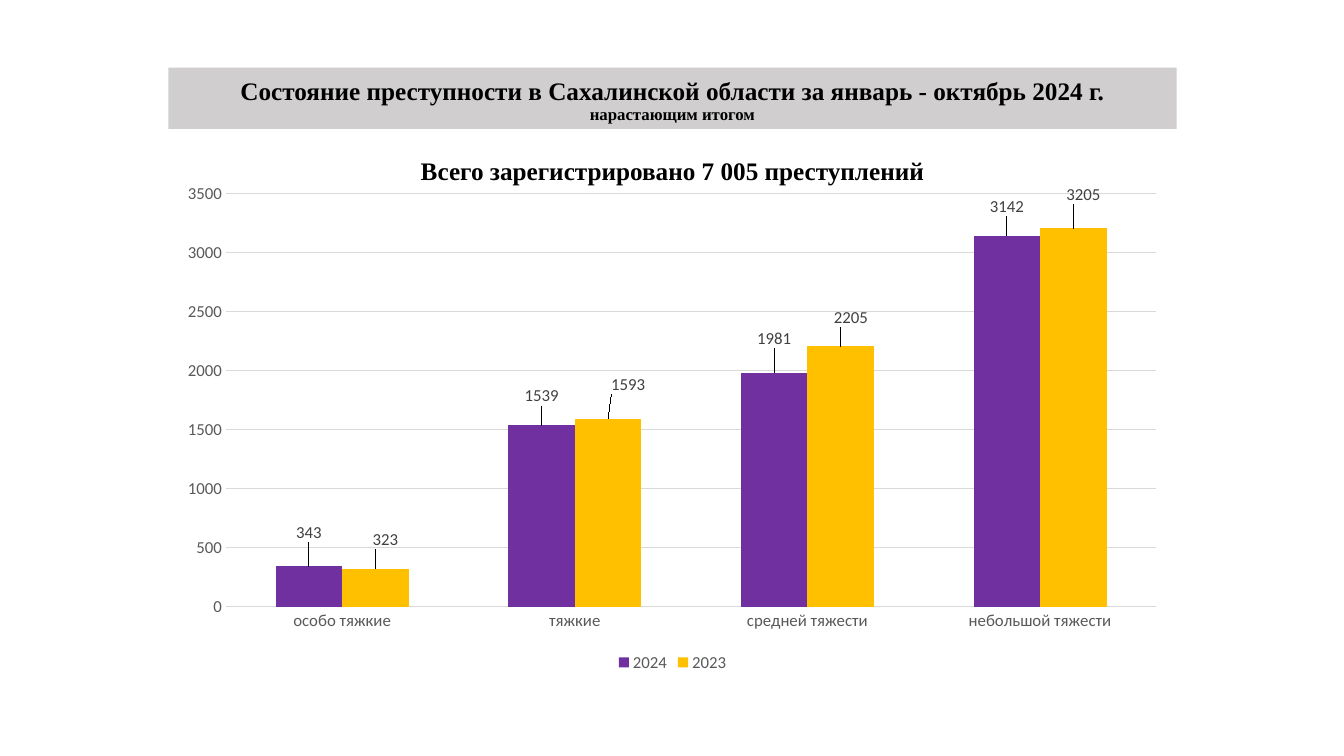
from dataclasses import dataclass

from lxml.etree import _Element as Element
from pptx import Presentation
from pptx.chart.data import CategoryChartData
from pptx.chart.series import BarSeries
from pptx.dml.color import RGBColor
from pptx.enum.chart import XL_CHART_TYPE as ChartType
from pptx.enum.chart import XL_LABEL_POSITION as LabelPosition
from pptx.enum.chart import XL_LEGEND_POSITION as LegendPosition
from pptx.enum.chart import XL_TICK_MARK as TickMark
from pptx.enum.text import MSO_ANCHOR as Anchor
from pptx.enum.text import PP_ALIGN as Align
from pptx.oxml import parse_xml
from pptx.oxml.ns import nsdecls
from pptx.slide import Slide
from pptx.util import Inches, Pt

COLORS = {
    "band": "D0CECE",
    "heading": "000000",
    "axis": "595959",
    "label": "404040",
    "grid": "D9D9D9",
    "2024": "7030A0",
    "2023": "FFC000",
}
LEFT, WIDTH = 1.67, 10
CATEGORIES = ["особо тяжкие", "тяжкие", "средней тяжести", "небольшой тяжести"]


@dataclass
class Heading:
    top: float
    height: float
    lines: list[tuple[str, int]]
    spacing: float
    anchor: Anchor
    fill: str | None = None


@dataclass
class Year:
    name: str
    values: list[int]
    label_shifts: list[tuple[float, float]]  # fractions of the chart size


HEADINGS = [
    Heading(0.67, 0.61,
            [("Состояние преступности в Сахалинской области за январь - октябрь 2024 г.", 18),
             ("нарастающим итогом", 12)], 0.9, Anchor.BOTTOM, "band"),
    Heading(1.55, 0.36, [("Всего зарегистрировано 7 005 преступлений", 18)], 0.8, Anchor.TOP),
]
YEARS = [
    Year("2024", [343, 1539, 1981, 3142],
         [(0, -0.04), (0, -0.03), (0, -0.04), (0, -0.03)]),
    Year("2023", [323, 1593, 2205, 3205],
         [(0.01, -0.03), (0.02, -0.04), (0.01, -0.03), (0.01, -0.04)]),
]


def rgb(key: str) -> RGBColor:
    return RGBColor.from_string(COLORS[key])


def set_font(font, size: int, color: str, name: str = "Calibri", bold: bool = False) -> None:
    for attribute, value in {"size": Pt(size), "name": name, "bold": bold}.items():
        setattr(font, attribute, value)
    font.color.rgb = rgb(color)


def manual_layout(**parts: str | float) -> Element:
    body = "".join(f'<c:{key} val="{value}"/>' for key, value in parts.items())
    return parse_xml(f'<c:layout {nsdecls("c")}><c:manualLayout>{body}</c:manualLayout></c:layout>')


def add_heading(slide: Slide, heading: Heading) -> None:
    box = slide.shapes.add_textbox(
        Inches(LEFT), Inches(heading.top), Inches(WIDTH), Inches(heading.height))
    if heading.fill:
        box.fill.solid()
        box.fill.fore_color.rgb = rgb(heading.fill)
    frame = box.text_frame
    frame.word_wrap = True
    frame.vertical_anchor = heading.anchor
    paragraph = frame.paragraphs[0]
    paragraph.alignment = Align.CENTER
    paragraph.line_spacing = heading.spacing
    for index, (text, size) in enumerate(heading.lines):
        if index:
            paragraph.add_line_break()
        run = paragraph.add_run()
        run.text = text
        set_font(run.font, size, "heading", "Times New Roman", True)


def style_year(series: BarSeries, year: Year) -> None:
    series.format.fill.solid()
    series.format.fill.fore_color.rgb = rgb(year.name)
    labels = series.data_labels
    labels.show_value = True
    labels.position = LabelPosition.OUTSIDE_END
    set_font(labels.font, 12, "label")
    for index, (x, y) in enumerate(year.label_shifts):
        label = series.points[index].data_label
        set_font(label.font, 12, "label")
        label.position = LabelPosition.OUTSIDE_END
        label_xml = series._element.xpath(f"c:dLbls/c:dLbl[c:idx/@val='{index}']")[0]
        label_xml.insert(1, manual_layout(x=x, y=y))


def add_crime_chart(slide: Slide) -> None:
    data = CategoryChartData()
    data.categories = CATEGORIES
    for year in YEARS:
        data.add_series(year.name, year.values)
    chart = slide.shapes.add_chart(
        ChartType.COLUMN_CLUSTERED, Inches(LEFT), Inches(1.72),
        Inches(WIDTH), Inches(4.99), data).chart
    chart.has_title = False
    set_font(chart.font, 10, "heading")

    # Transparent background and fixed plot area
    chart_space = chart._chartSpace
    chart_space.xpath("c:chart")[0].addnext(parse_xml(
        f'<c:spPr {nsdecls("c", "a")}><a:noFill/><a:ln><a:noFill/></a:ln></c:spPr>'))
    plot_area = chart_space.xpath("c:chart/c:plotArea")[0]
    for layout in plot_area.xpath("c:layout"):
        plot_area.remove(layout)
    plot_area.insert(0, manual_layout(
        layoutTarget="inner", xMode="edge", yMode="edge", x=0.057, y=0.04, w=0.923, h=0.822))

    # Axes
    for axis in (chart.category_axis, chart.value_axis):
        axis.major_tick_mark = axis.minor_tick_mark = TickMark.NONE
        axis.format.line.fill.background()
        set_font(axis.tick_labels.font, 12, "axis")
    scale = chart.value_axis
    for attribute, value in {"minimum_scale": 0, "maximum_scale": 3500, "major_unit": 500}.items():
        setattr(scale, attribute, value)
    grid_line = scale.major_gridlines.format.line
    grid_line.color.rgb = rgb("grid")
    grid_line.width = Pt(0.75)

    # Legend
    chart.has_legend = True
    chart.legend.position = LegendPosition.BOTTOM
    chart.legend.include_in_layout = False
    set_font(chart.legend.font, 12, "axis")

    # Columns
    columns = chart.plots[0]
    columns.gap_width = 150
    columns.overlap = 0
    columns.vary_by_categories = False
    for series, year in zip(columns.series, YEARS):
        style_year(series, year)


def main() -> None:
    deck = Presentation()
    deck.slide_width, deck.slide_height = Inches(13.33), Inches(7.5)
    slide = deck.slides.add_slide(deck.slide_layouts[6])
    for heading in HEADINGS:
        add_heading(slide, heading)
    add_crime_chart(slide)
    deck.save("out.pptx")


if __name__ == "__main__":
    main()
